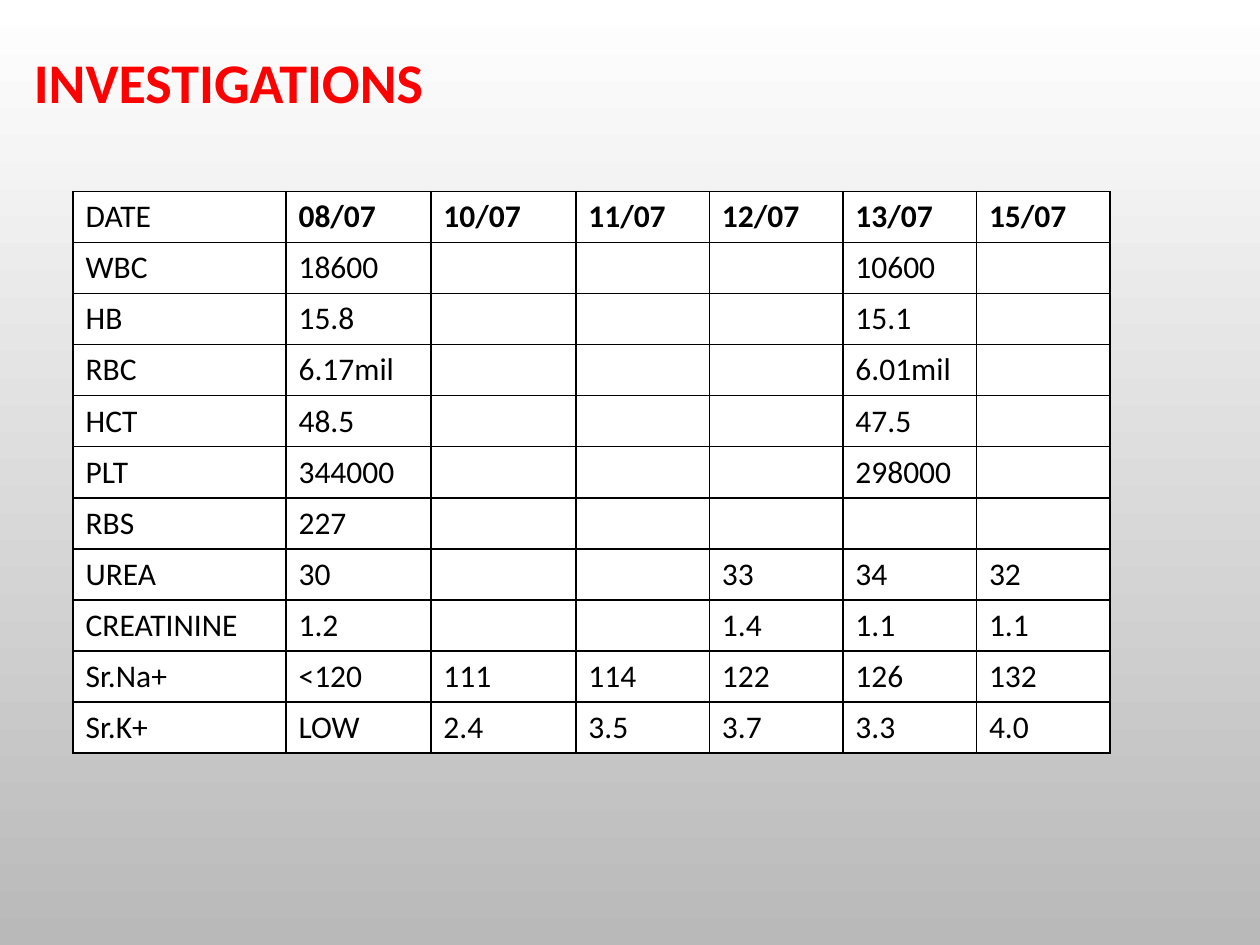
from dataclasses import dataclass

import lxml.etree
import pptx
import pptx.dml.color
import pptx.enum.text
import pptx.oxml.ns
import pptx.util

Inches = pptx.util.Inches
Pt = pptx.util.Pt
RGBColor = pptx.dml.color.RGBColor


@dataclass(frozen=True)
class Theme:
    font: str = "Calibri"
    title_size: int = 32
    cell_size: int = 18
    border_width: int = 1
    title: str = "FF0000"
    text: str = "000000"
    border: str = "000000"
    cell: str = "FFFFFF"
    background_top: str = "FFFFFF"
    background_bottom: str = "B9B9B9"


THEME = Theme()

COLUMN_WIDTHS = [1.69, 1.15, 1.15, 1.06, 1.06, 1.06, 1.06]

RESULTS = [
    ["DATE", "08/07", "10/07", "11/07", "12/07", "13/07", "15/07"],
    ["WBC", "18600", "", "", "", "10600", ""],
    ["HB", "15.8", "", "", "", "15.1", ""],
    ["RBC", "6.17mil", "", "", "", "6.01mil", ""],
    ["HCT", "48.5", "", "", "", "47.5", ""],
    ["PLT", "344000", "", "", "", "298000", ""],
    ["RBS", "227", "", "", "", "", ""],
    ["UREA", "30", "", "", "33", "34", "32"],
    ["CREATININE", "1.2", "", "", "1.4", "1.1", "1.1"],
    ["Sr.Na+", "<120", "111", "114", "122", "126", "132"],
    ["Sr.K+", "LOW", "2.4", "3.5", "3.7", "3.3", "4.0"],
]


def format_font(font, size, color, bold):
    font.name = THEME.font
    font.size = Pt(size)
    font.bold = bold
    font.color.rgb = RGBColor.from_string(color)


def paint_background(slide):
    fill = slide.background.fill
    fill.gradient()
    fill.gradient_angle = 270
    colors = (THEME.background_top, THEME.background_bottom)
    for stop, color in zip(fill.gradient_stops, colors):
        stop.color.rgb = RGBColor.from_string(color)


def add_title(slide, left, top, width, height):
    shape = slide.shapes.add_textbox(left, top, width, height)
    text_frame = shape.text_frame
    text_frame.text = "INVESTIGATIONS"
    text_frame.word_wrap = False
    text_frame.auto_size = pptx.enum.text.MSO_AUTO_SIZE.SHAPE_TO_FIT_TEXT
    run = text_frame.paragraphs[0].runs[0]
    format_font(run.font, THEME.title_size, THEME.title, True)


def add_borders(cell):
    qn = pptx.oxml.ns.qn
    properties = cell._tc.get_or_add_tcPr()
    for side in ("a:lnL", "a:lnR", "a:lnT", "a:lnB"):
        line = lxml.etree.SubElement(
            properties, qn(side), w=str(Pt(THEME.border_width))
        )
        fill = lxml.etree.SubElement(line, qn("a:solidFill"))
        lxml.etree.SubElement(fill, qn("a:srgbClr"), val=THEME.border)


def add_results_table(slide, left, top, width, height):
    frame = slide.shapes.add_table(
        len(RESULTS), len(COLUMN_WIDTHS), left, top, width, height
    )
    table = frame.table
    table.horz_banding = False
    for column, column_width in zip(table.columns, COLUMN_WIDTHS):
        column.width = Inches(column_width)
    for row_index, values in enumerate(RESULTS):
        for column_index, value in enumerate(values):
            cell = table.cell(row_index, column_index)
            add_borders(cell)
            cell.fill.solid()
            cell.fill.fore_color.rgb = RGBColor.from_string(THEME.cell)
            cell.text = value
            bold = row_index == 0 and column_index > 0
            for run in cell.text_frame.paragraphs[0].runs:
                format_font(run.font, THEME.cell_size, THEME.text, bold)


def main():
    presentation = pptx.Presentation()
    presentation.slide_width = Inches(10)
    presentation.slide_height = Inches(7.5)
    slide = presentation.slides.add_slide(presentation.slide_layouts[6])
    paint_background(slide)
    add_title(slide, Inches(0.17), Inches(0.33), Inches(3.46), Inches(0.64))
    add_results_table(
        slide, Inches(0.58), Inches(1.52), Inches(8.25), Inches(4.46)
    )
    presentation.save("out.pptx")


if __name__ == "__main__":
    main()
